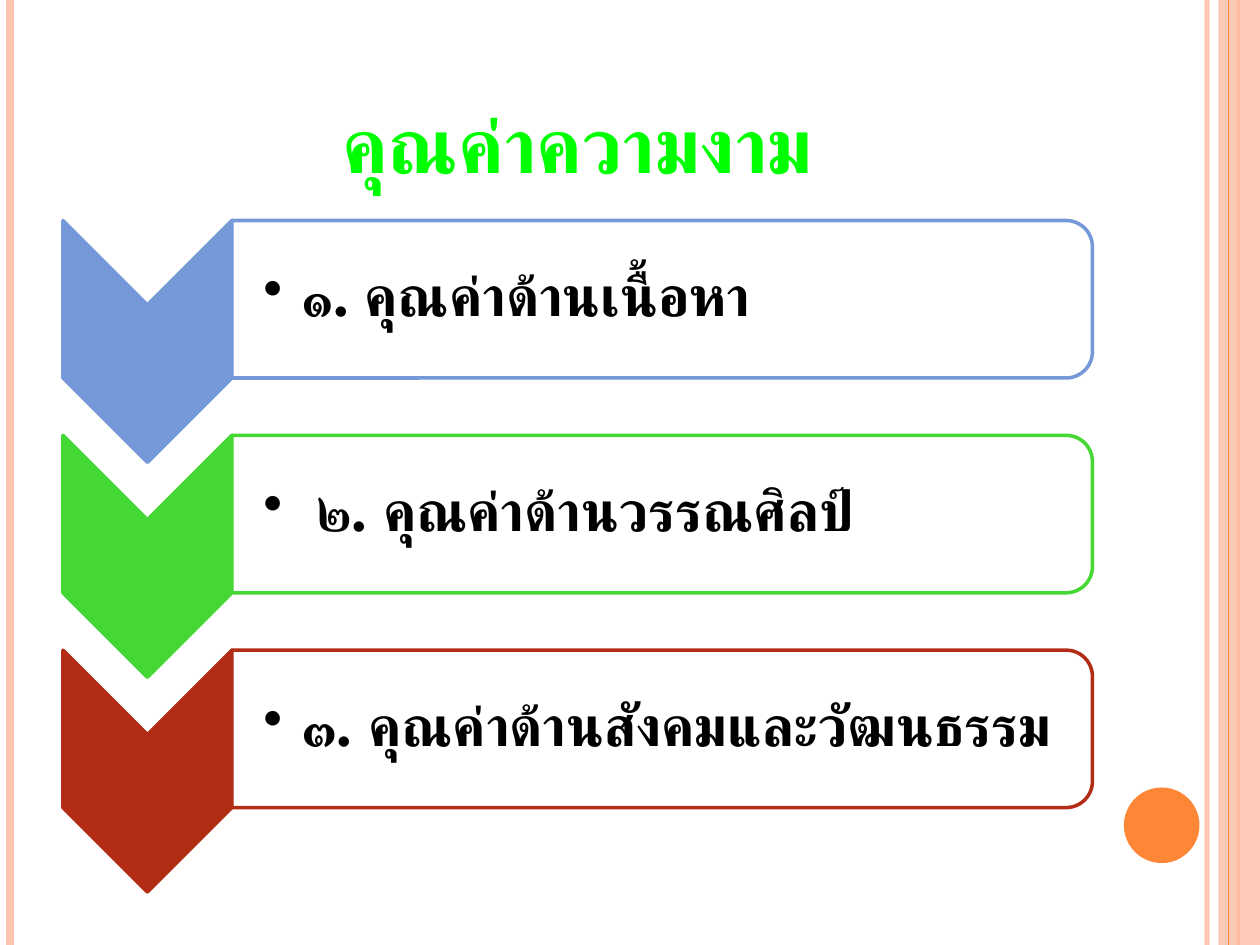
"""Build the slide on the three values of beauty as a chevron list."""
from typing import NamedTuple, Optional

from lxml.etree import SubElement
from pptx import Presentation
from pptx.dml.color import RGBColor
from pptx.enum.shapes import MSO_CONNECTOR, MSO_SHAPE
from pptx.enum.text import MSO_ANCHOR as Anchor, PP_ALIGN as Align
from pptx.oxml.ns import qn
from pptx.util import Inches, Pt

FONT = "TeX Gyre Schola"
PEACH = RGBColor(0xFE, 0xC3, 0xAE)
ORANGE = RGBColor(0xFE, 0x86, 0x37)
LIME = RGBColor(0x00, 0xFF, 0x00)
BLUE = RGBColor(0x75, 0x98, 0xD9)
GREEN = RGBColor(0x45, 0xD8, 0x34)
RED = RGBColor(0xB3, 0x2C, 0x16)
WHITE = RGBColor(0xFF, 0xFF, 0xFF)
BLACK = RGBColor(0x00, 0x00, 0x00)

COLUMNS, ROWS = 100, 75
CELL = Inches(0.1)
FIRST_ROW, ROW_STEP = 17.5, 17.05


class Box(NamedTuple):
    """An area in grid columns and rows."""
    left: float
    top: float
    width: float
    height: float

    def lengths(self) -> list[int]:
        """Return the area in slide units."""
        return [round(value * CELL) for value in self]

    def turned(self) -> "Box":
        """Return the unrotated frame that covers this area after a quarter turn."""
        shift = (self.width - self.height) / 2
        return Box(self.left + shift, self.top - shift, self.height, self.width)


class Rule(NamedTuple):
    """A vertical line over the full slide height."""
    column: float
    color: RGBColor
    points: float
    opacity: int = 100


class Value(NamedTuple):
    """One item of the list."""
    text: str
    color: RGBColor


RULES_BELOW = [Rule(95.8, PEACH, 3, 93), Rule(0.8, PEACH, 4.5), Rule(98.3, ORANGE, 1.5)]
RULE_ABOVE = Rule(97.5, ORANGE, 0.75)
VALUES = [
    Value("๑. คุณค่าด้านเนื้อหา", BLUE),
    Value(" ๒. คุณค่าด้านวรรณศิลป์", GREEN),
    Value("๓. คุณค่าด้านสังคมและวัฒนธรรม", RED),
]


def set_opacity(properties, percent: int) -> None:
    """Add an alpha value to the first solid colour."""
    color = next(properties.iter(qn("a:srgbClr")))
    SubElement(color, qn("a:alpha"), val=str(percent * 1000))


def draw_rule(slide, rule: Rule) -> None:
    """Draw a vertical line without a shadow."""
    x = round(rule.column * CELL)
    connector = slide.shapes.add_connector(MSO_CONNECTOR.STRAIGHT, x, 0, x, ROWS * CELL)
    connector.line.color.rgb = rule.color
    connector.line.width = Pt(rule.points)
    properties = connector._element.spPr
    if rule.opacity < 100:
        set_opacity(properties, rule.opacity)
    SubElement(properties, qn("a:effectLst"))


def draw_shape(slide, kind: MSO_SHAPE, box: Box, fill: RGBColor, opacity: int = 100,
               outline: Optional[RGBColor] = None, rotation: int = 0) -> None:
    """Draw a filled preset shape that covers the given area."""
    frame = box.turned() if rotation else box
    shape = slide.shapes.add_shape(kind, *frame.lengths())
    shape.rotation = rotation
    shape.shadow.inherit = False
    shape.fill.solid()
    shape.fill.fore_color.rgb = fill
    if opacity < 100:
        set_opacity(shape._element.spPr, opacity)
    if outline is None:
        shape.line.fill.background()
    else:
        shape.line.color.rgb = outline
        shape.line.width = Pt(2)


def draw_text(slide, box: Box, text: str, size: int, color: RGBColor, anchor: Anchor):
    """Draw a bold line of text and return its shape."""
    shape = slide.shapes.add_textbox(*box.lengths())
    text_frame = shape.text_frame
    text_frame.word_wrap = True
    text_frame.vertical_anchor = anchor
    text_frame.text = text
    run = text_frame.paragraphs[0].runs[0]
    run.font.name = FONT
    run.font.size = Pt(size)
    run.font.bold = True
    run.font.color.rgb = color
    for script in ("a:ea", "a:cs"):
        SubElement(run.font._element, qn(script), typeface=FONT)
    return shape


def draw_title(slide) -> None:
    """Draw the centred title."""
    title = draw_text(slide, Box(5, 3, 81.7, 12.5), "คุณค่าความงาม", 44, LIME, Anchor.BOTTOM)
    title.text_frame.paragraphs[0].alignment = Align.CENTER


def draw_value(slide, value: Value, top: float) -> None:
    """Draw a chevron, its rounded panel and the bulleted text."""
    draw_shape(slide, MSO_SHAPE.CHEVRON, Box(5, top, 13.4, 19.2), value.color,
               outline=value.color, rotation=90)
    draw_shape(slide, MSO_SHAPE.ROUND_2_SAME_RECTANGLE, Box(18.4, top, 68.3, 12.5), WHITE,
               opacity=90, outline=value.color, rotation=90)
    label = draw_text(slide, Box(18.4, top + 0.6, 67.7, 11.2), value.text, 32, BLACK,
                      Anchor.MIDDLE)
    text_frame = label.text_frame
    text_frame.margin_left = Inches(0.25)
    text_frame.margin_top = text_frame.margin_right = text_frame.margin_bottom = Inches(0.02)
    paragraph = text_frame.paragraphs[0]
    paragraph.level = 1
    paragraph.line_spacing = 0.9
    properties = paragraph._p.get_or_add_pPr()
    properties.set("marL", str(Inches(0.31)))
    properties.set("indent", str(-Inches(0.31)))
    SubElement(properties, qn("a:buChar"), char="•")


def main() -> None:
    """Build and save the presentation."""
    presentation = Presentation()
    presentation.slide_width = COLUMNS * CELL
    presentation.slide_height = ROWS * CELL
    slide = presentation.slides.add_slide(presentation.slide_layouts[6])
    for rule in RULES_BELOW:
        draw_rule(slide, rule)
    draw_shape(slide, MSO_SHAPE.RECTANGLE, Box(96.7, 0, 3.3, ROWS), PEACH, opacity=87)
    draw_rule(slide, RULE_ABOVE)
    draw_shape(slide, MSO_SHAPE.OVAL, Box(89.2, 62.5, 6, 6), ORANGE)
    draw_title(slide)
    for index, value in enumerate(VALUES):
        draw_value(slide, value, FIRST_ROW + index * ROW_STEP)
    presentation.save("out.pptx")


if __name__ == "__main__":
    main()
